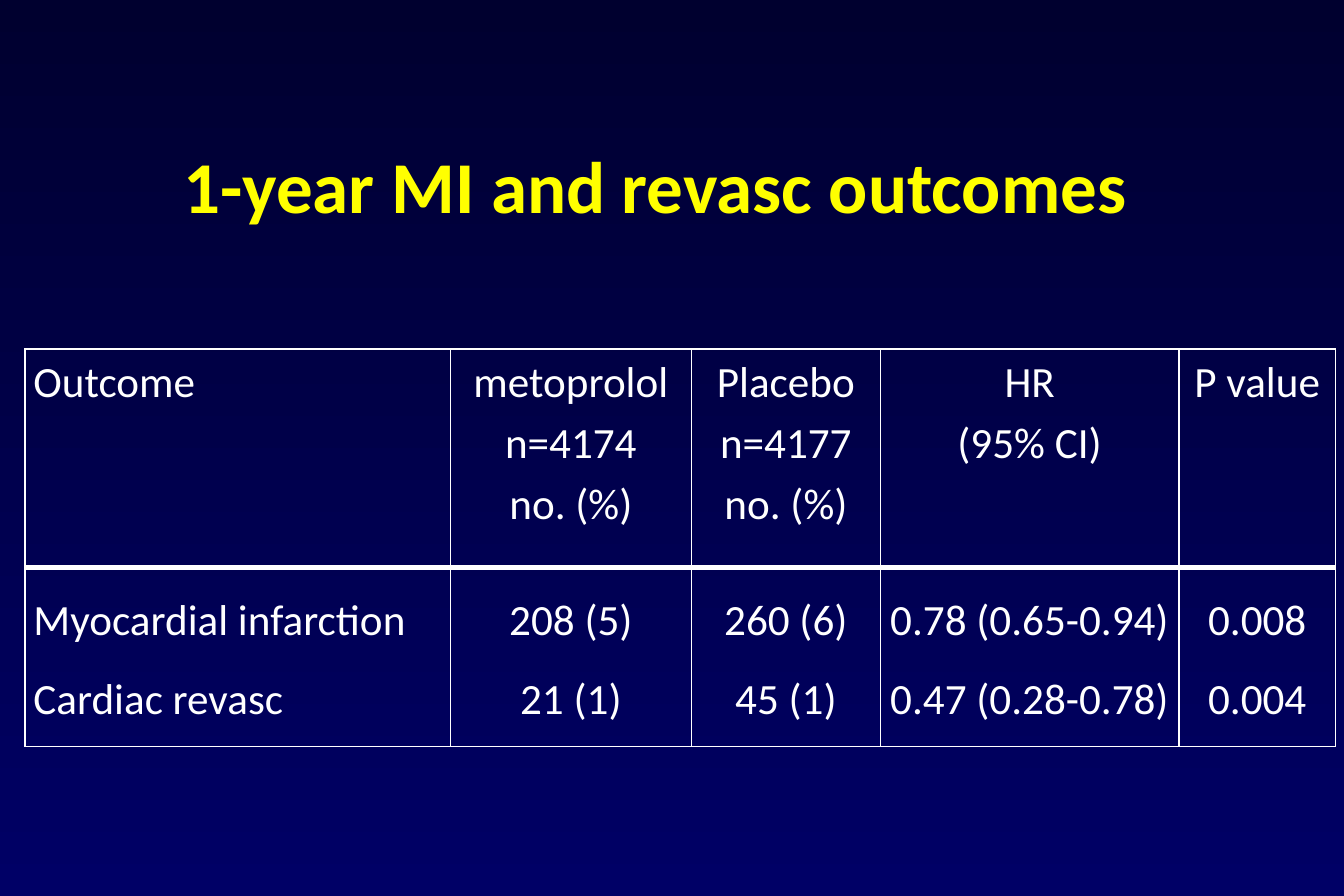
"""Build a slide with a table of one-year MI and revasc outcomes."""
from dataclasses import dataclass

import pptx
import pptx.dml.color
import pptx.enum.text
import pptx.oxml
import pptx.oxml.ns
import pptx.util

Inches = pptx.util.Inches
Pt = pptx.util.Pt
ALIGN = pptx.enum.text.PP_ALIGN
ANCHOR = pptx.enum.text.MSO_ANCHOR
FONT = "Calibri"
COLORS = {"top": "00002F", "base": "000066", "title": "FFFF00", "text": "FFFFFF"}


@dataclass
class Column:
    """A table column with its heading and value lines."""
    width: float
    head: list[str]
    values: list[str]
    align: ALIGN = ALIGN.CENTER


@dataclass
class Row:
    """A table row with its height, line spacing and rule widths."""
    height: float
    pitch: float
    over: int
    under: int


COLUMNS = [
    Column(3.56, ["Outcome"], ["Myocardial infarction", "Cardiac revasc"], ALIGN.LEFT),
    Column(2.02, ["metoprolol", "n=4174", "no. (%)"], ["208 (5)", "21 (1)"]),
    Column(1.58, ["Placebo", "n=4177", "no. (%)"], ["260 (6)", "45 (1)"]),
    Column(2.5, ["HR", "(95% CI)"], ["0.78 (0.65-0.94)", "0.47 (0.28-0.78)"]),
    Column(1.31, ["P value"], ["0.008", "0.004"]),
]
ROWS = [Row(1.83, 1.15, 1, 3), Row(1.5, 1.5, 3, 1)]


def color(name: str) -> pptx.dml.color.RGBColor:
    """Look up a named colour."""
    return pptx.dml.color.RGBColor.from_string(COLORS[name])


def add_run(para, text: str, size: int, name: str, bold: bool = False) -> None:
    """Add one formatted run to a paragraph."""
    run = para.add_run()
    run.text = text
    run.font.name = FONT
    run.font.size = Pt(size)
    run.font.bold = bold
    run.font.color.rgb = color(name)


def add_border(cell, side: str, width: int) -> None:
    """Draw one edge of a cell."""
    space = pptx.oxml.ns.nsdecls("a")
    line = pptx.oxml.parse_xml(
        f'<a:ln{side} {space} w="{Pt(width)}"><a:solidFill>'
        f'<a:srgbClr val="{COLORS["text"]}"/></a:solidFill></a:ln{side}>'
    )
    cell._tc.get_or_add_tcPr().append(line)


def fill_cell(cell, lines: list[str], col: Column, row: Row) -> None:
    """Write and frame one cell."""
    for side, width in (("L", 1), ("R", 1), ("T", row.over), ("B", row.under)):
        add_border(cell, side, width)
    cell.fill.background()
    cell.margin_left = cell.margin_right = Inches(0.07)
    cell.margin_top = cell.margin_bottom = 0
    cell.vertical_anchor = ANCHOR.TOP
    frame = cell.text_frame
    for num, text in enumerate(lines):
        para = frame.add_paragraph() if num else frame.paragraphs[0]
        para.alignment = col.align
        para.line_spacing = row.pitch
        add_run(para, text, 26, "text")


def add_title(slide) -> None:
    """Place and format the title."""
    title = slide.shapes.title
    title.left, title.top = Inches(0.71), Inches(1)
    title.width, title.height = Inches(9.56), Inches(1.08)
    title.text_frame.vertical_anchor = ANCHOR.MIDDLE
    para = title.text_frame.paragraphs[0]
    para.alignment = ALIGN.CENTER
    add_run(para, "1-year MI and revasc outcomes", 44, "title", True)


def add_grid(slide) -> None:
    """Add the table of outcomes."""
    width = sum(col.width for col in COLUMNS)
    height = sum(row.height for row in ROWS)
    table = slide.shapes.add_table(
        len(ROWS), len(COLUMNS), Inches(0.21), Inches(2.92), Inches(width), Inches(height)
    ).table
    table.first_row = table.horz_banding = False
    for y, row in enumerate(ROWS):
        table.rows[y].height = Inches(row.height)
        for x, col in enumerate(COLUMNS):
            table.columns[x].width = Inches(col.width)
            lines = col.values if y else col.head
            fill_cell(table.cell(y, x), lines, col, row)


def main() -> None:
    """Build and save the slide."""
    deck = pptx.Presentation()
    deck.slide_width, deck.slide_height = Inches(11.25), Inches(7.5)
    slide = deck.slides.add_slide(deck.slide_layouts[5])
    fill = slide.background.fill
    fill.gradient()
    fill.gradient_angle = 270
    for stop, name in zip(fill.gradient_stops, ("top", "base")):
        stop.color.rgb = color(name)
    add_title(slide)
    add_grid(slide)
    deck.save("out.pptx")


if __name__ == "__main__":
    main()
